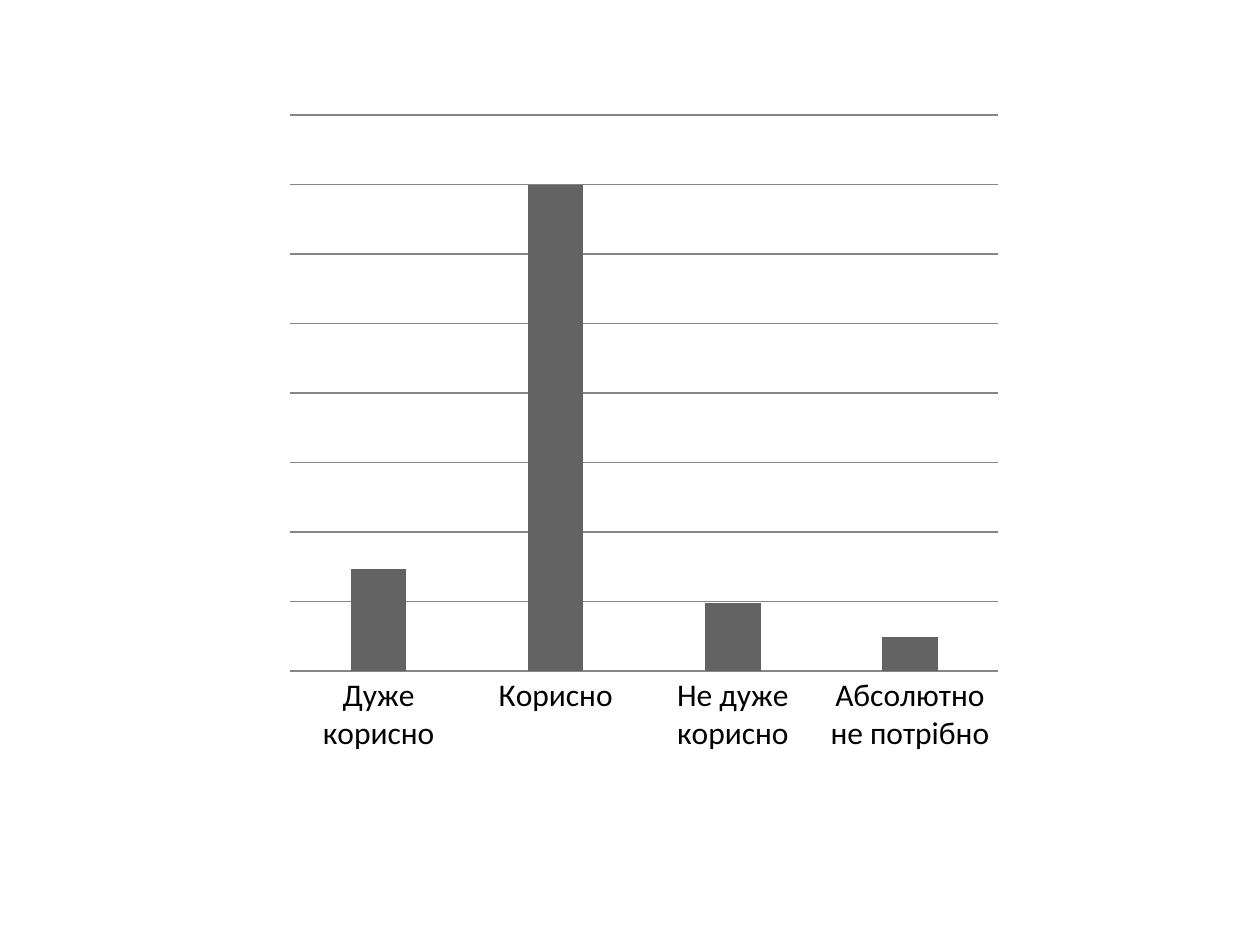
from pptx import Presentation
from pptx.chart.data import CategoryChartData
from pptx.dml.color import RGBColor
from pptx.enum.chart import XL_CHART_TYPE as ChartType, XL_TICK_MARK as TickMark
from pptx.oxml import parse_xml
from pptx.oxml.ns import nsdecls
from pptx.util import Inches, Pt

COLORS = {"text": "000000", "bar": "636363", "line": "868686"}
ANSWERS = {
    "Дуже корисно": 21,
    "Корисно": 100,
    "Не дуже корисно": 14,
    "Абсолютно не потрібно": 7,
}
GRID_STEP = 14.29
GRID_ROWS = 8


class SlideBuilder:
    """Holds the style and the current slide; lengths are shares of the slide."""

    font_name = "Calibri"
    font_size = Pt(18)
    line_width = Pt(0.75)

    def __init__(self, presentation):
        self.width = presentation.slide_width
        self.height = presentation.slide_height
        self.slide = presentation.slides.add_slide(presentation.slide_layouts[6])

    def color(self, name):
        return RGBColor.from_string(COLORS[name])

    def style_line(self, line):
        line.color.rgb = self.color("line")
        line.width = self.line_width

    def column_chart(self, left, top, width, height, values, plot):
        data = CategoryChartData()
        data.categories = list(values)
        data.add_series("Series 1", list(values.values()))
        chart = self.slide.shapes.add_chart(
            ChartType.COLUMN_CLUSTERED,
            round(left * self.width), round(top * self.height),
            round(width * self.width), round(height * self.height), data,
        ).chart
        chart.has_legend = False
        chart.has_title = False
        chart.font.name = self.font_name
        chart.font.size = self.font_size
        chart.font.color.rgb = self.color("text")
        self.style_columns(chart.plots[0])
        self.style_axes(chart)
        self.place_plot(chart, plot)

    def style_columns(self, plot):
        plot.vary_by_categories = False
        plot.gap_width = 219
        plot.overlap = -27
        fill = plot.series[0].format.fill
        fill.solid()
        fill.fore_color.rgb = self.color("bar")

    def style_axes(self, chart):
        category_axis, value_axis = chart.category_axis, chart.value_axis
        category_axis.major_tick_mark = TickMark.NONE
        self.style_line(category_axis.format.line)
        value_axis.minimum_scale = 0
        value_axis.maximum_scale = GRID_STEP * GRID_ROWS
        value_axis.major_unit = GRID_STEP
        value_axis.has_major_gridlines = True
        self.style_line(value_axis.major_gridlines.format.line)
        value_axis.visible = False

    def place_plot(self, chart, plot):
        """Fix the inner plot area at (x, y, w, h), as shares of the chart."""
        sizes = "".join(f'<c:{key} val="{share}"/>' for key, share in zip("xywh", plot))
        layout = parse_xml(
            f'<c:layout {nsdecls("c")}><c:manualLayout><c:layoutTarget val="inner"/>'
            f'<c:xMode val="edge"/><c:yMode val="edge"/>{sizes}</c:manualLayout></c:layout>'
        )
        plot_area = chart.plots[0]._element.getparent()
        for old_layout in plot_area.findall(layout.tag):
            plot_area.remove(old_layout)
        plot_area.insert(0, layout)


def main():
    presentation = Presentation()
    presentation.slide_width = Inches(10)
    presentation.slide_height = Inches(7.5)
    builder = SlideBuilder(presentation)
    builder.column_chart(0.175, 0.07, 0.65, 0.74, ANSWERS, plot=(0.085, 0.07, 0.865, 0.795))
    presentation.save("out.pptx")


if __name__ == "__main__":
    main()
